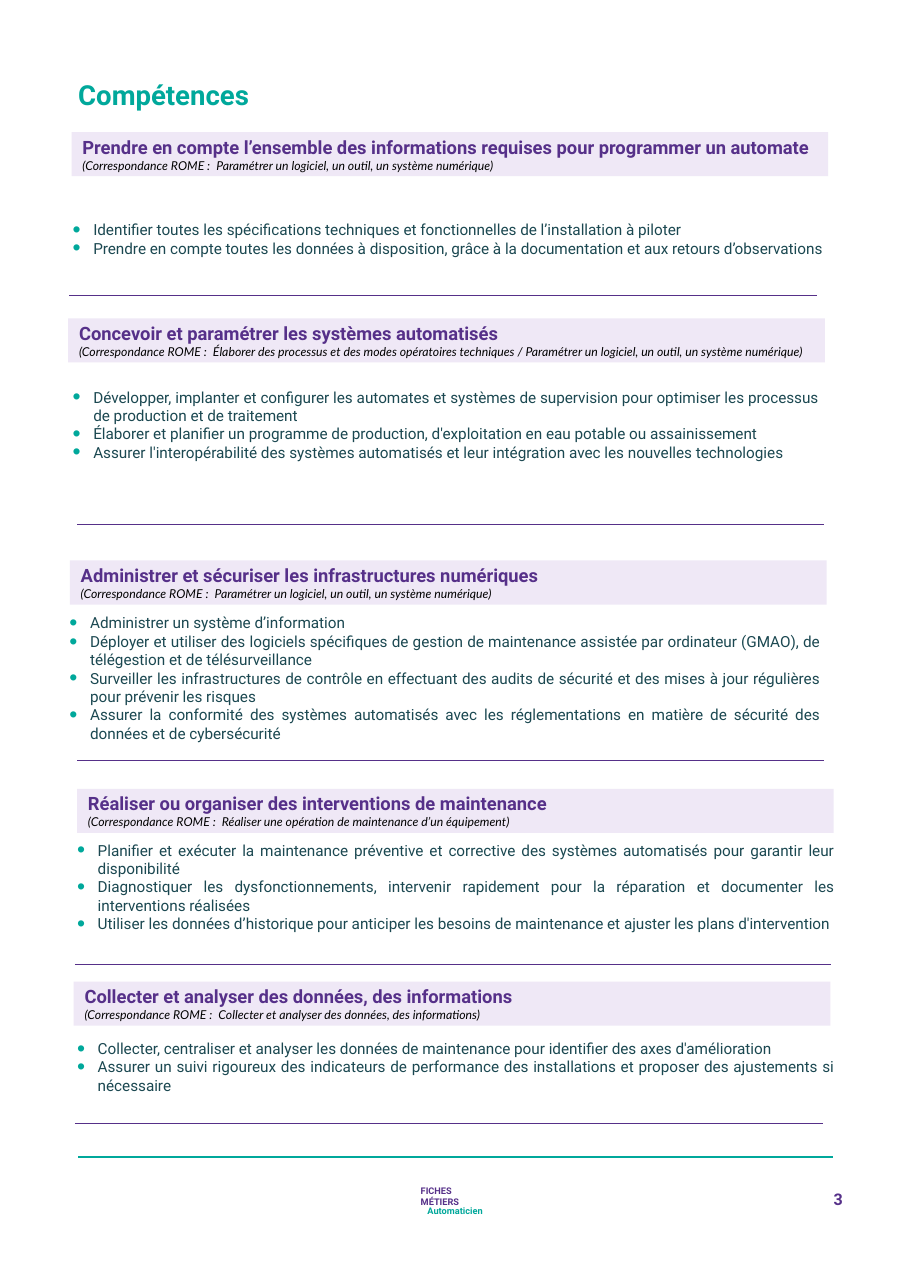
from lxml.etree import SubElement
from pptx import Presentation
from pptx.dml.color import RGBColor
from pptx.enum.shapes import MSO_CONNECTOR as Connector, MSO_SHAPE as Preset
from pptx.enum.text import MSO_ANCHOR as Anchor, PP_ALIGN as Align
from pptx.oxml.ns import qn
from pptx.util import Pt

VIOLET, TEAL, LILAC, SLATE, BLACK = "563089", "00A89B", "EFE8F6", "1B4851", "000000"


def paint(target, color, size=None, name="Roboto", bold=False, italic=False):
    if size is None:
        target.solid()
        target.fore_color.rgb = RGBColor.from_string(color)
    else:
        target.size, target.name = Pt(size), name
        target.bold, target.italic = bold, italic
        target.color.rgb = RGBColor.from_string(color)


def set_margins(frame, left, top, right, bottom):
    frame.word_wrap = True
    frame.margin_left, frame.margin_top = Pt(left), Pt(top)
    frame.margin_right, frame.margin_bottom = Pt(right), Pt(bottom)


sections = [
    ("Prendre en compte l’ensemble des informations requises pour programmer un automate",
     "Paramétrer un logiciel, un outil, un système numérique",
     (46.8, 86.4), (47.5, 144, 494.6, 63.4),
     ["Identifier toutes les spécifications techniques et fonctionnelles de l’installation à piloter",
      "Prendre en compte toutes les données à disposition, grâce à la documentation et aux retours d’observations"]),
    ("Concevoir et paramétrer les systèmes automatisés",
     "Élaborer des processus et des modes opératoires techniques / Paramétrer un logiciel, un outil, un système numérique",
     (44.6, 208.1), (47.5, 253.4, 487.4, 63.4),
     ["Développer, implanter et configurer les automates et systèmes de supervision pour optimiser les processus de production et de traitement",
      "Élaborer et planifier un programme de production, d'exploitation en eau potable ou assainissement",
      "Assurer l'interopérabilité des systèmes automatisés et leur intégration avec les nouvelles technologies"]),
    ("Administrer et sécuriser les infrastructures numériques",
     "Paramétrer un logiciel, un outil, un système numérique",
     (45.7, 366.3), (45.4, 401, 490.3, 76.3),
     ["Administrer un système d’information",
      "Déployer et utiliser des logiciels spécifiques de gestion de maintenance assistée par ordinateur (GMAO), de télégestion et de télésurveillance",
      "Surveiller les infrastructures de contrôle en effectuant des audits de sécurité et des mises à jour régulières pour prévenir les risques",
      "Assurer la conformité des systèmes automatisés avec les réglementations en matière de sécurité des données et de cybersécurité"]),
    ("Réaliser ou organiser des interventions de maintenance",
     "Réaliser une opération de maintenance d’un équipement",
     (50.4, 515.5), (50.4, 549.4, 494.6, 62.6),
     ["Planifier et exécuter la maintenance préventive et corrective des systèmes automatisés pour garantir leur disponibilité",
      "Diagnostiquer les dysfonctionnements, intervenir rapidement pour la réparation et documenter les interventions réalisées",
      "Utiliser les données d’historique pour anticiper les besoins de maintenance et ajuster les plans d'intervention"]),
    ("Collecter et analyser des données, des informations",
     "Collecter et analyser des données, des informations",
     (48.2, 641.5), (50.4, 679, 494.6, 28.8),
     ["Collecter, centraliser et analyser les données de maintenance pour identifier des axes d'amélioration",
      "Assurer un suivi rigoureux des indicateurs de performance des installations et proposer des ajustements si nécessaire"]),
]

rules = [
    (45.4, 534.2, 193.2, VIOLET, 0.5),
    (50.4, 538.6, 342.7, VIOLET, 0.5),
    (50.4, 538.6, 497.2, VIOLET, 0.5),
    (49, 542.9, 630, VIOLET, 0.5),
    (49, 537.8, 734.4, VIOLET, 0.5),
    (51.1, 544.3, 756, TEAL, 1),
]

footers = [
    ("FICHES MÉTIERS", 275, 775.4, 44.6, VIOLET),
    ("Automaticien", 279.4, 784.8, 40, TEAL),
]

deck = Presentation()
deck.slide_width, deck.slide_height = Pt(595.44), Pt(841.68)
page = deck.slides.add_slide(deck.slide_layouts[5])

title = page.shapes.title
title.left, title.top, title.width, title.height = Pt(51.1), Pt(53.3), Pt(495.4), Pt(19.4)
title.text_frame.text = "Compétences"
set_margins(title.text_frame, 0, 0, 0, 0)
title.text_frame.vertical_anchor = Anchor.BOTTOM
para = title.text_frame.paragraphs[0]
para.alignment, para.line_spacing = Align.LEFT, 0.9
paint(para.font, TEAL, 18, bold=True)

for heading, reference, (left, top), bounds, skills in sections:
    banner = page.shapes.add_shape(Preset.RECTANGLE, Pt(left), Pt(top), Pt(494.6), Pt(28.8))
    banner.shadow.inherit = False
    paint(banner.fill, LILAC)
    banner.line.fill.background()
    frame = banner.text_frame
    set_margins(frame, 7.2, 3.6, 0, 3.6)
    frame.vertical_anchor = Anchor.MIDDLE
    frame.text = f"{heading}\n(Correspondance ROME :\u00a0 {reference})"
    for para in frame.paragraphs:
        para.alignment = Align.LEFT
    paint(frame.paragraphs[0].font, VIOLET, 12, bold=True)
    paint(frame.paragraphs[1].font, BLACK, 8, "Lato", italic=True)

    box = page.shapes.add_textbox(*map(Pt, bounds))
    set_margins(box.text_frame, 0, 0, 0, 0)
    box.text_frame.text = "\n".join(skills)
    for para in box.text_frame.paragraphs:
        para.alignment = Align.JUSTIFY
        settings = para._p.get_or_add_pPr()
        settings.set("marL", str(Pt(13.5)))
        settings.set("indent", str(Pt(-13.5)))
        SubElement(SubElement(settings, qn("a:buClr")), qn("a:srgbClr"), val=TEAL)
        SubElement(settings, qn("a:buSzPct"), val="150000")
        SubElement(settings, qn("a:buFont"), typeface="Arial")
        SubElement(settings, qn("a:buChar"), char="•")
        paint(para.font, SLATE, 10)

for start, end, height, color, weight in rules:
    rule = page.shapes.add_connector(Connector.STRAIGHT, Pt(start), Pt(height), Pt(end), Pt(height))
    paint(rule.line.fill, color)
    rule.line.width = Pt(weight)
    SubElement(rule._element.spPr, qn("a:effectLst"))

for label, left, top, width, color in footers:
    box = page.shapes.add_textbox(Pt(left), Pt(top), Pt(width), Pt(10.1))
    set_margins(box.text_frame, 0, 2.9, 0, 0)
    box.text_frame.vertical_anchor = Anchor.MIDDLE
    box.text_frame.text = label
    paint(box.text_frame.paragraphs[0].font, color, 6, bold=True)

number = page.shapes.add_textbox(Pt(424.1), Pt(774), Pt(133.9), Pt(15.1))
set_margins(number.text_frame, 7.2, 3.6, 7.2, 3.6)
number.text_frame.text = "3"
para = number.text_frame.paragraphs[0]
para.alignment = Align.RIGHT
paint(para.font, VIOLET, 10.5, bold=True)

deck.save("out.pptx")
